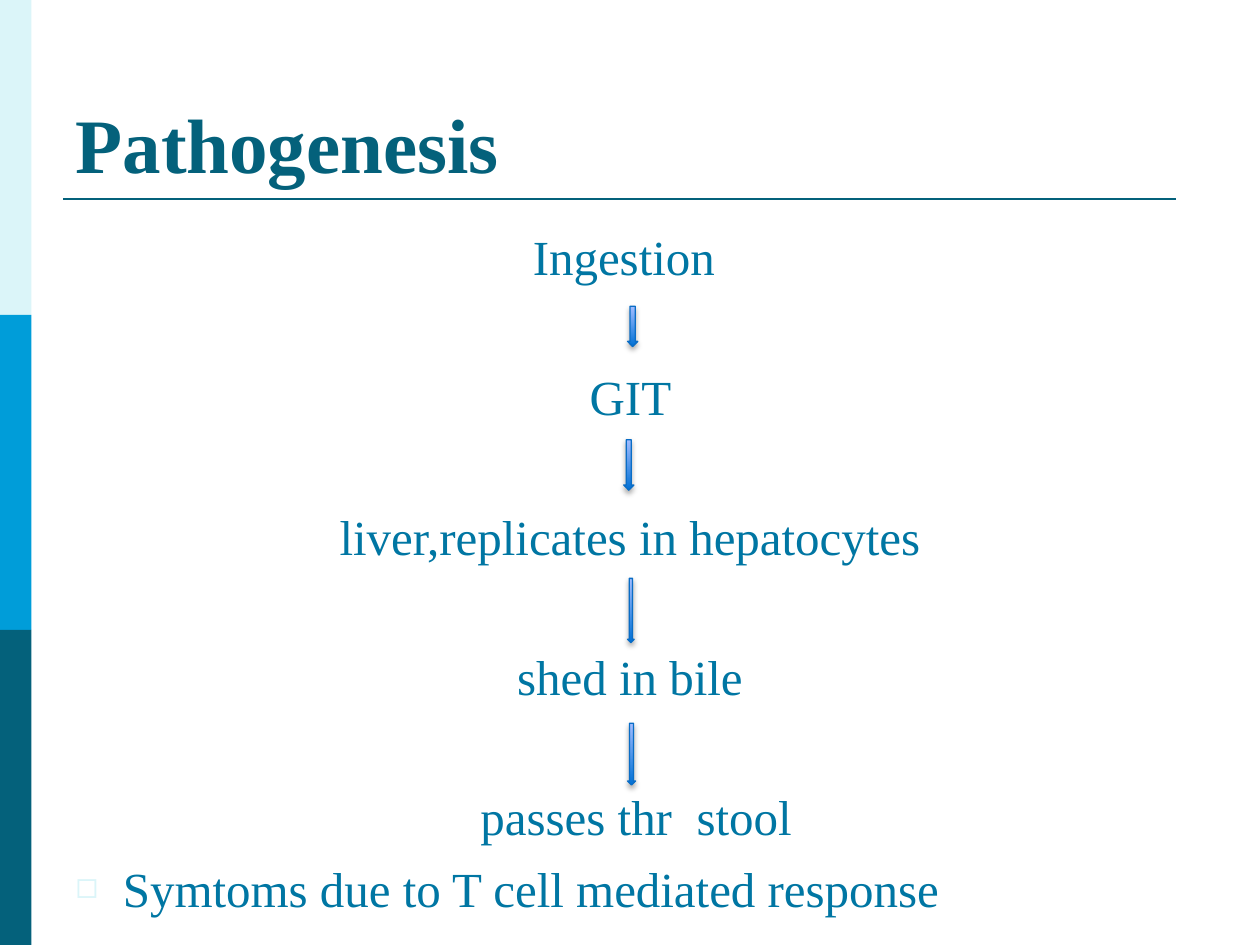
from dataclasses import dataclass

from lxml.etree import SubElement
from pptx import Presentation
from pptx.dml.color import RGBColor as Rgb
from pptx.enum.shapes import MSO_CONNECTOR as Connector, MSO_SHAPE as Shape
from pptx.enum.text import MSO_ANCHOR as Anchor, MSO_AUTO_SIZE as AutoSize, PP_ALIGN as Align
from pptx.oxml.ns import qn
from pptx.util import Pt


@dataclass(frozen=True)
class Theme:
    font: str = "Times New Roman"
    title_size: float = 44
    body_size: float = 28
    dark: str = "04617B"
    bright: str = "009DD9"
    pale: str = "DBF5F9"
    body: str = "0076A3"
    arrow_bottom: str = "0070D5"
    arrow_top: str = "A3BDFF"
    arrow_line: str = "0A6DC6"


@dataclass(frozen=True)
class Arrow:
    left: float
    top: float
    width: float
    height: float


THEME = Theme()
STEPS = ["Ingestion ", " GIT ", " liver,replicates in hepatocytes ",
         " shed in bile ", " passes thr  stool"]
CONCLUSION = "Symtoms due to T cell mediated response"
ARROWS = [Arrow(358.6, 175, 5.8, 23), Arrow(356.4, 251.3, 5.8, 28.8),
          Arrow(358.6, 330.5, 3.8, 36.7), Arrow(358.6, 413.3, 4.6, 35.3)]
FIRST_GAP, STEP_GAP, LINE_GAP = 7, 46.4, 7
BAND_WIDTH, BAND_HEIGHT = 18, 180


def place(shape, left: float, top: float, width: float, height: float) -> None:
    shape.left, shape.top, shape.width, shape.height = map(Pt, (left, top, width, height))


def format_runs(paragraph, size: float, color: str, bold: bool = False) -> None:
    for run in paragraph.runs:
        run.font.name, run.font.size, run.font.bold = THEME.font, Pt(size), bold
        run.font.color.rgb = Rgb.from_string(color)


def set_bullet(paragraph, character: str = "") -> None:
    """Give the paragraph a hanging indent and a bullet, or none."""
    properties = paragraph._p.get_or_add_pPr()
    properties.set("marL", str(Pt(27)))
    properties.set("indent", str(-Pt(27)))
    if not character:
        SubElement(properties, qn("a:buNone"))
        return
    color = SubElement(properties, qn("a:buClr"))
    SubElement(color, qn("a:srgbClr"), val=THEME.pale)
    SubElement(properties, qn("a:buSzPct"), val="75000")
    SubElement(properties, qn("a:buFont"), typeface=THEME.font)
    SubElement(properties, qn("a:buChar"), char=character)


def draw_band(slide, index: int, color: str) -> None:
    band = slide.shapes.add_shape(Shape.RECTANGLE, 0, Pt(index * BAND_HEIGHT),
                                  Pt(BAND_WIDTH), Pt(BAND_HEIGHT))
    band.shadow.inherit = False
    band.fill.solid()
    band.fill.fore_color.rgb = Rgb.from_string(color)
    band.line.fill.background()


def draw_arrow(slide, arrow: Arrow) -> None:
    shape = slide.shapes.add_shape(Shape.DOWN_ARROW, Pt(arrow.left), Pt(arrow.top),
                                   Pt(arrow.width), Pt(arrow.height))
    shape.fill.gradient()
    shape.fill.gradient_angle = 90
    for stop, color in zip(shape.fill.gradient_stops, (THEME.arrow_bottom, THEME.arrow_top)):
        stop.color.rgb = Rgb.from_string(color)
    shape.fill.gradient_stops[0].position = 0
    shape.fill.gradient_stops[1].position = 1
    shape.line.color.rgb = Rgb.from_string(THEME.arrow_line)
    shape.line.width = Pt(0.75)
    # Soft shadow below the arrow
    shape.shadow.inherit = False
    effects = shape._element.spPr.find(qn("a:effectLst"))
    shadow = SubElement(effects, qn("a:outerShdw"), blurRad=str(Pt(3.1)),
                        dist=str(Pt(1.8)), dir="5400000", rotWithShape="0")
    color = SubElement(shadow, qn("a:srgbClr"), val="000000")
    SubElement(color, qn("a:alpha"), val="35000")


def write_title(title) -> None:
    place(title, 36, 21.6, 648, 90)
    frame = title.text_frame
    frame.text = "Pathogenesis"
    frame.vertical_anchor = Anchor.BOTTOM
    frame.auto_size = AutoSize.NONE
    frame.paragraphs[0].alignment = Align.LEFT
    format_runs(frame.paragraphs[0], THEME.title_size, THEME.dark, bold=True)


def write_body(body) -> None:
    place(body, 36, 126, 648, 356.4)
    frame = body.text_frame
    frame.text = "\n".join(STEPS + [CONCLUSION])
    frame.auto_size = AutoSize.NONE
    *steps, conclusion = frame.paragraphs
    for index, paragraph in enumerate(steps):
        paragraph.alignment = Align.CENTER
        paragraph.space_before = Pt(STEP_GAP if index else FIRST_GAP)
        set_bullet(paragraph)
    conclusion.space_before = Pt(LINE_GAP)
    set_bullet(conclusion, "◻")
    for paragraph in frame.paragraphs:
        format_runs(paragraph, THEME.body_size, THEME.body)


def main() -> None:
    presentation = Presentation()
    presentation.slide_width, presentation.slide_height = Pt(720), Pt(540)
    slide = presentation.slides.add_slide(presentation.slide_layouts[1])

    # Side bands and the rule under the title
    for index, color in enumerate((THEME.pale, THEME.bright, THEME.dark)):
        draw_band(slide, index, color)
    rule = slide.shapes.add_connector(Connector.STRAIGHT, Pt(36), Pt(113.8), Pt(672), Pt(113.8))
    rule.line.color.rgb = Rgb.from_string(THEME.dark)
    rule.line.width = Pt(1.5)
    SubElement(rule._element.spPr, qn("a:effectLst"))

    # Title, steps and the arrows between them
    write_title(slide.shapes.title)
    write_body(slide.placeholders[1])
    for arrow in ARROWS:
        draw_arrow(slide, arrow)

    presentation.save("out.pptx")


if __name__ == "__main__":
    main()
